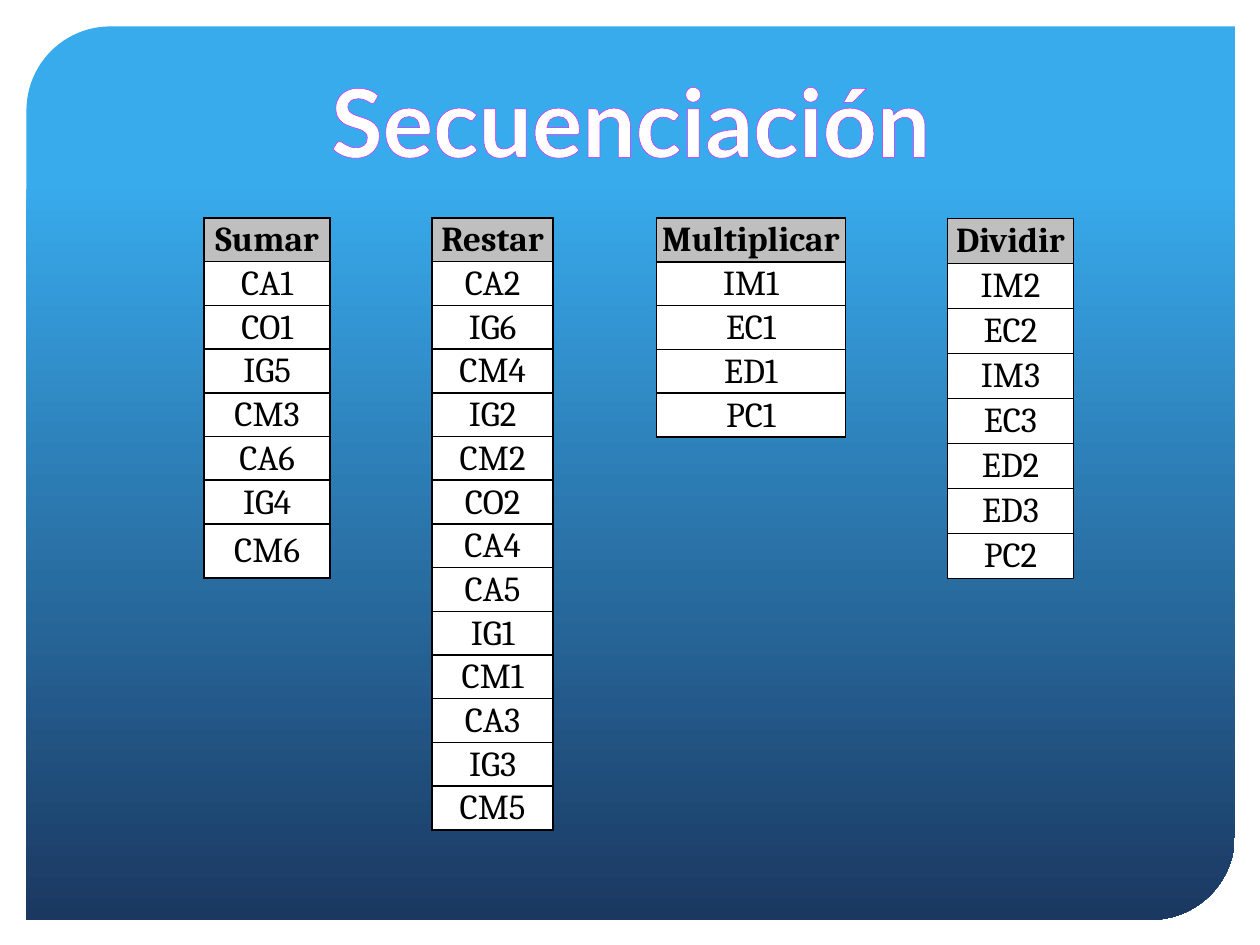
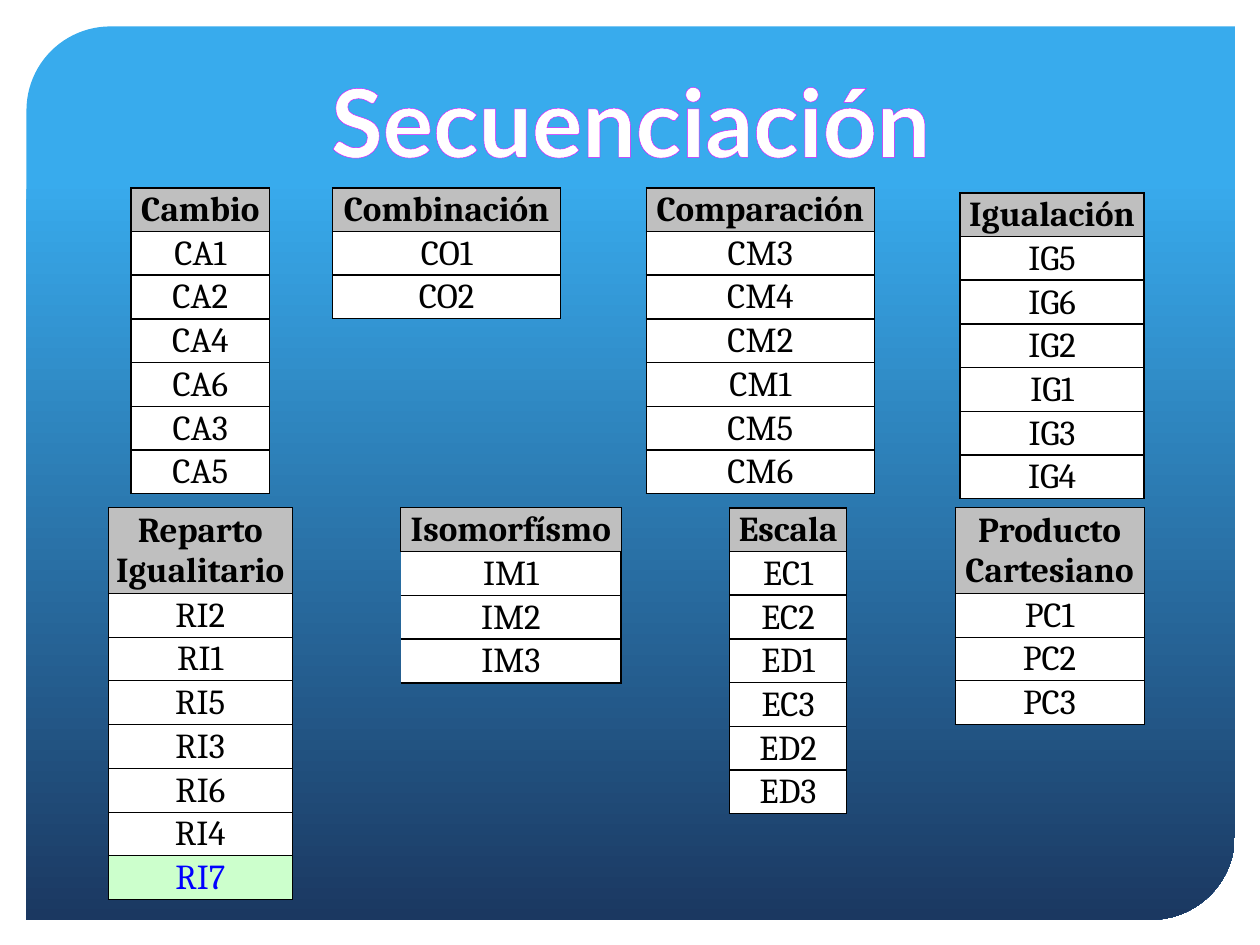
import pptx
import pptx.dml.color
import pptx.enum.shapes
import pptx.enum.text
import pptx.oxml
import pptx.oxml.ns
import pptx.util
from pptx.util import Inches

COLORS = {
    "white": "FFFFFF",
    "black": "000000",
    "sky": "38ABED",
    "navy": "1B3861",
    "title_outline": "E113FF",
    "header": "BFBFBF",
    "highlight": "CCFFCC",
    "highlight_text": "0000FF",
}
HIGHLIGHTED = {"RI7"}
TITLE = "Secuenciación"

OPERATIONS = [
    dict(box=(1.62, 1.73, 1, 2.86), header="Sumar", last_height=0.43,
         codes="CA1 CO1 IG5 CM3 CA6 IG4 CM6"),
    dict(box=(3.43, 1.73, 0.96, 4.86), header="Restar",
         codes="CA2 IG6 CM4 IG2 CM2 CO2 CA4 CA5 IG1 CM1 CA3 IG3 CM5"),
    dict(box=(5.21, 1.73, 1.5, 1.74), header="Multiplicar", codes="IM1 EC1 ED1 PC1"),
    dict(box=(7.52, 1.73, 1, 2.86), header="Dividir", border=0.5,
         codes="IM2 EC2 IM3 EC3 ED2 ED3 PC2"),
]
CATEGORIES = [
    dict(box=(1.04, 1.49, 1.1, 2.43), header="Cambio", codes="CA1 CA2 CA4 CA6 CA3 CA5"),
    dict(box=(2.64, 1.49, 1.81, 1.04), header="Combinación", codes="CO1 CO2"),
    dict(box=(5.13, 1.49, 1.81, 2.43), header="Comparación",
         codes="CM3 CM4 CM2 CM1 CM5 CM6"),
    dict(box=(7.62, 1.53, 1.46, 2.43), header="Igualación",
         codes="IG5 IG6 IG2 IG1 IG3 IG4"),
    dict(box=(0.86, 4.03, 1.46, 3.11), header="Reparto Igualitario", border=0.5,
         header_height=0.68, codes="RI2 RI1 RI5 RI3 RI6 RI4 RI7"),
    dict(box=(3.18, 4.03, 1.75, 1.39), header="Isomorfísmo", header_border=0.5,
         open_left=True, codes="IM1 IM2 IM3"),
    dict(box=(5.79, 4.03, 0.93, 2.43), header="Escala", codes="EC1 EC2 ED1 EC3 ED2 ED3"),
    dict(box=(7.58, 4.03, 1.5, 1.72), header="Producto Cartesiano", border=0.5,
         header_height=0.68, codes="PC1 PC2 PC3"),
]


def rgb(name):
    """Return the named palette colour."""
    return pptx.dml.color.RGBColor.from_string(COLORS[name])


def line_xml(tag, width, color):
    """Return a line element, invisible when its width is zero."""
    paint = (f'<a:solidFill><a:srgbClr val="{COLORS[color]}"/></a:solidFill>'
             if width else "<a:noFill/>")
    namespace = pptx.oxml.ns.nsdecls("a")
    return pptx.oxml.parse_xml(
        f'<a:{tag} {namespace} w="{pptx.util.Pt(width)}">{paint}</a:{tag}>')


def write_text(text_frame, text, font="Cambria", size=20, color="black", bold=False,
               outline=None):
    """Write one centred paragraph with the given format."""
    paragraph = text_frame.paragraphs[0]
    paragraph.alignment = pptx.enum.text.PP_ALIGN.CENTER
    run = paragraph.add_run()
    run.text = text
    run.font.name = font
    run.font.size = pptx.util.Pt(size)
    run.font.bold = bold
    run.font.color.rgb = rgb(color)
    if outline:
        run.font._element.insert(0, line_xml("ln", 1, outline))


def add_backdrop(slide, box):
    """Draw the gradient panel with two rounded corners."""
    panel = slide.shapes.add_shape(
        pptx.enum.shapes.MSO_SHAPE.ROUND_2_DIAG_RECTANGLE, *map(Inches, box))
    panel.adjustments[0] = 0.094
    panel.adjustments[1] = 0
    panel.shadow.inherit = False
    panel.line.fill.background()
    panel.fill.gradient()
    panel.fill.gradient_angle = 270
    stops = [(0.17, "sky"), (1, "navy")]
    for stop, (position, color) in zip(panel.fill.gradient_stops, stops):
        stop.position = position
        stop.color.rgb = rgb(color)


def add_title(slide, box):
    """Add the outlined slide title."""
    title = slide.shapes.add_textbox(*map(Inches, box))
    title.text_frame.word_wrap = False
    title.text_frame.auto_size = pptx.enum.text.MSO_AUTO_SIZE.SHAPE_TO_FIT_TEXT
    write_text(title.text_frame, TITLE, font="Lato", size=54, color="white", bold=True,
               outline="title_outline")


def format_cell(cell, text, fill, borders, **text_format):
    """Set the margins, borders, fill and text of a table cell."""
    cell.margin_left = cell.margin_right = cell.margin_top = Inches(0.01)
    cell.margin_bottom = 0
    cell.vertical_anchor = pptx.enum.text.MSO_ANCHOR.MIDDLE
    properties = cell._tc.get_or_add_tcPr()
    for tag, width in zip(("lnL", "lnR", "lnT", "lnB"), borders):
        properties.append(line_xml(tag, width, "black"))
    cell.fill.solid()
    cell.fill.fore_color.rgb = rgb(fill)
    write_text(cell.text_frame, text, **text_format)


def add_code_table(slide, box, header, codes, border=1, header_border=None,
                   header_height=None, last_height=None, open_left=False):
    """Add a one-column table of problem codes under a header."""
    codes = codes.split()
    header_border = header_border or border
    frame = slide.shapes.add_table(len(codes) + 1, 1, *map(Inches, box))
    table = frame.table
    table.first_row = table.horz_banding = False

    special = {0: header_height, len(codes): last_height}
    special = {row: height for row, height in special.items() if height}
    regular = (box[3] - sum(special.values())) / (len(codes) + 1 - len(special))
    for index, row in enumerate(table.rows):
        row.height = Inches(special.get(index, regular))

    format_cell(table.cell(0, 0), header, "header", [header_border] * 4, bold=True)
    for index, code in enumerate(codes, start=1):
        marked = code in HIGHLIGHTED
        top = header_border if index == 1 else border
        borders = (0 if open_left else border, border, top, border)
        format_cell(table.cell(index, 0), code, "highlight" if marked else "white",
                    borders, color="highlight_text" if marked else "black")


def add_sequence_slide(presentation, tables):
    """Add a titled slide holding the given code tables."""
    slide = presentation.slides.add_slide(presentation.slide_layouts[6])
    add_backdrop(slide, (0.21, 0.21, 9.59, 7.09))
    add_title(slide, (2.38, 0.45, 5.25, 1.01))
    for table in tables:
        add_code_table(slide, **table)


def main():
    """Build and save the presentation."""
    presentation = pptx.Presentation()
    presentation.slide_width = Inches(10)
    presentation.slide_height = Inches(7.5)
    for tables in (OPERATIONS, CATEGORIES):
        add_sequence_slide(presentation, tables)
    presentation.save("out.pptx")


if __name__ == "__main__":
    main()
